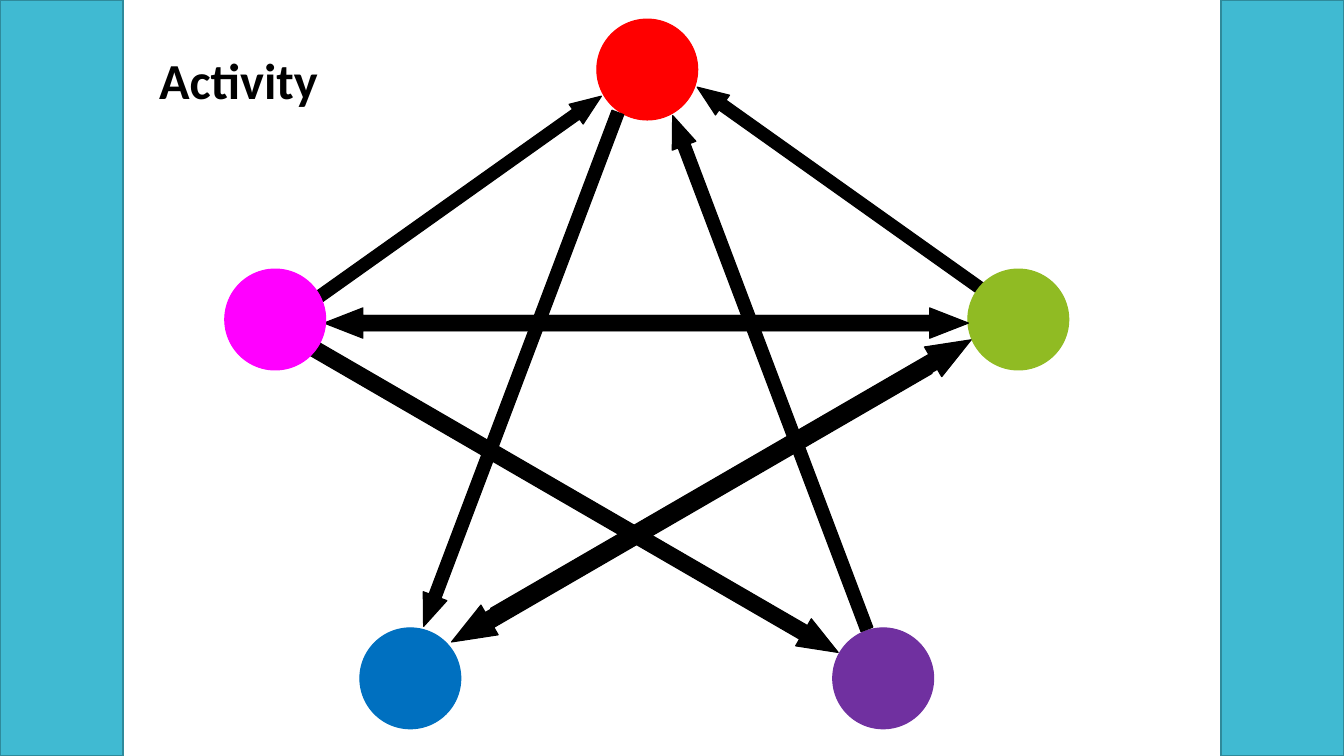
from dataclasses import dataclass

from pptx import Presentation
from pptx.dml.color import RGBColor
from pptx.enum.shapes import MSO_SHAPE
from pptx.enum.text import MSO_AUTO_SIZE
from pptx.util import Inches, Pt

OVAL, RECT, DOWN_ARROW = MSO_SHAPE.OVAL, MSO_SHAPE.RECTANGLE, MSO_SHAPE.DOWN_ARROW
GROW = MSO_AUTO_SIZE.SHAPE_TO_FIT_TEXT


@dataclass(frozen=True)
class Theme:
    font: str = "Calibri"
    title_size: float = 36
    line_width: float = 0.85
    ink: str = "000000"
    bar: str = "40BAD2"
    bar_line: str = "2F8A9B"
    red: str = "FF0000"
    blue: str = "0070C0"
    purple: str = "7030A0"
    green: str = "90BB23"
    magenta: str = "FF00FF"


THEME = Theme()
SLIDE_W, SLIDE_H = 13.33, 7.5
BAR_W = 1.22
NODE_SIZE = 1

# Node: left, top, colour
BACK_NODES = [
    (5.92, 0.19, THEME.red),
    (3.57, 6.23, THEME.blue),
    (8.26, 6.23, THEME.purple),
]
GREEN_NODE = (9.6, 2.67, THEME.green)
MAGENTA_NODE = (2.23, 2.67, THEME.magenta)

# Arrow: left, top, width, length, clockwise turn from pointing down
ARROWS_UNDER_GREEN = [
    (5.04, 0.94, 0.25, 5.45, 20.7),   # red to blue
    (7.51, 0.97, 0.25, 5.45, 159.3),  # purple to red
    (8.47, 0, 0.24, 4.11, 125.4),     # green to red
]
ARROWS_OVER_GREEN = [
    (4.17, 0.09, 0.24, 4.11, 234.6),  # magenta to red
    (6.39, 0.14, 0.3, 6.13, 270),     # magenta to green
    (6.13, 0.14, 0.3, 6.13, 90),      # green to magenta
    (6.67, 2.27, 0.34, 5.46, 59.9),   # green to blue
    (7.1, 2.01, 0.34, 5.46, 239.9),   # blue to green
    (5.42, 1.72, 0.31, 6.33, 300.1),  # magenta to purple
]


def add_filled(s, kind, left, top, width, height, fill, line):
    sp = s.shapes.add_shape(kind, Inches(left), Inches(top), Inches(width), Inches(height))
    sp.shadow.inherit = False
    sp.fill.solid()
    sp.fill.fore_color.rgb = RGBColor.from_string(fill)
    sp.line.color.rgb = RGBColor.from_string(line)
    sp.line.width = Pt(THEME.line_width)
    return sp


def add_node(s, left, top, color):
    add_filled(s, OVAL, left, top, NODE_SIZE, NODE_SIZE, color, color)


def add_arrow(s, left, top, width, length, turn):
    sp = add_filled(s, DOWN_ARROW, left, top, width, length, THEME.ink, THEME.ink)
    sp.adjustments[0] = 0.5
    sp.adjustments[1] = 1.28
    sp.rotation = turn


def add_title(s, text, left, top, width, height):
    sp = s.shapes.add_textbox(Inches(left), Inches(top), Inches(width), Inches(height))
    tf = sp.text_frame
    for name, value in {"word_wrap": False, "auto_size": GROW}.items():
        setattr(tf, name, value)
    r = tf.paragraphs[0].add_run()
    r.text = text
    font_format = {"name": THEME.font, "size": Pt(THEME.title_size), "bold": True}
    for name, value in font_format.items():
        setattr(r.font, name, value)
    r.font.color.rgb = RGBColor.from_string(THEME.ink)


def main():
    prs = Presentation()
    prs.slide_width, prs.slide_height = Inches(SLIDE_W), Inches(SLIDE_H)
    s = prs.slides.add_slide(prs.slide_layouts[6])

    # Side bars and title
    for left in (0, SLIDE_W - BAR_W):
        add_filled(s, RECT, left, 0, BAR_W, SLIDE_H, THEME.bar, THEME.bar_line)
    add_title(s, "Activity", 1.48, 0.44, 1.9, 0.71)

    # Network, from back to front
    for node in BACK_NODES:
        add_node(s, *node)
    for arrow in ARROWS_UNDER_GREEN:
        add_arrow(s, *arrow)
    add_node(s, *GREEN_NODE)
    for arrow in ARROWS_OVER_GREEN:
        add_arrow(s, *arrow)
    add_node(s, *MAGENTA_NODE)

    prs.save("out.pptx")


if __name__ == "__main__":
    main()
